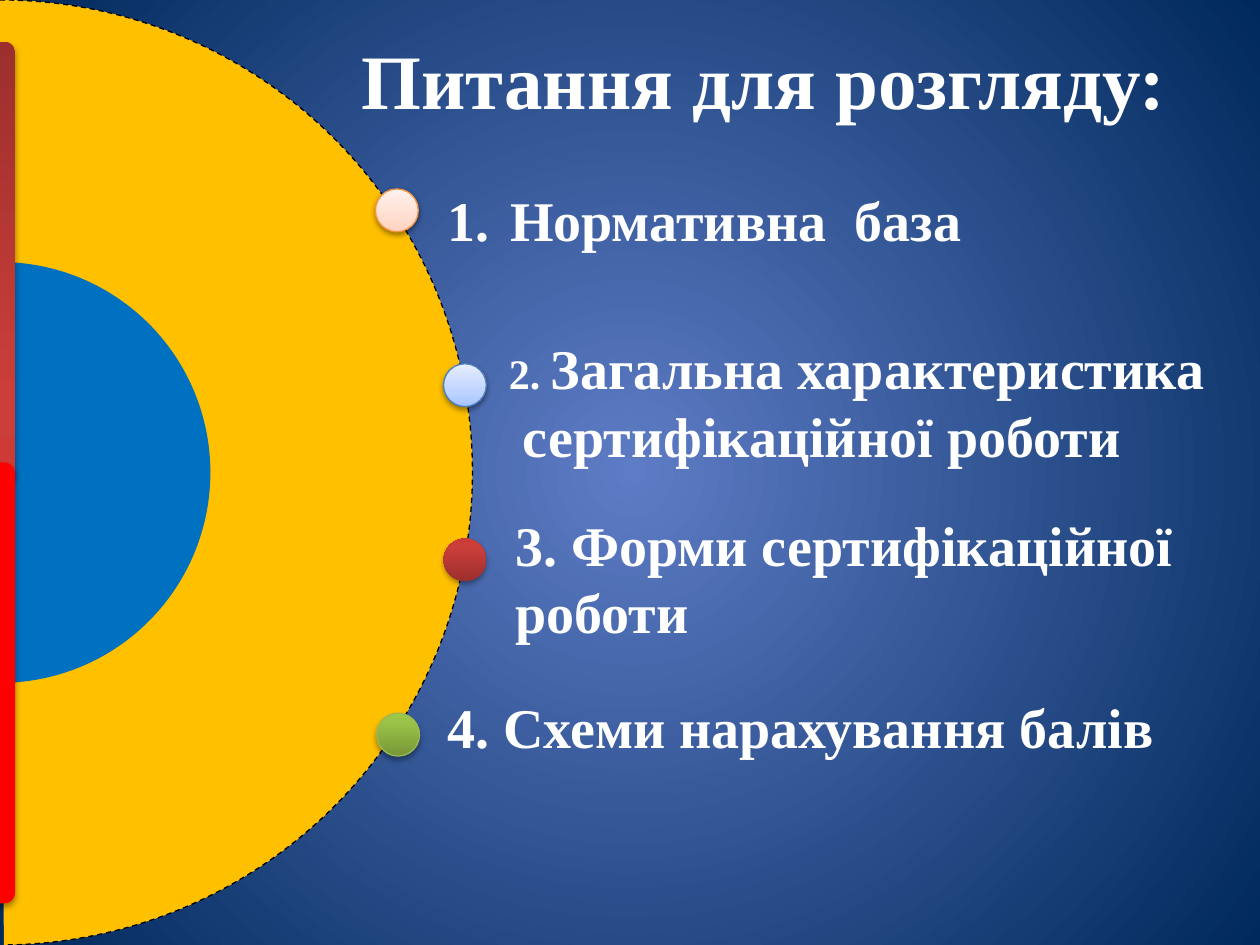
from lxml import etree
from pptx import Presentation
from pptx import util as u
from pptx.dml.color import RGBColor
from pptx.enum import dml, shapes, text
from pptx.oxml import ns

FONT = "Times New Roman"
WHITE = "FFFFFF"
RED = [(0, "9C2F2D"), (80, "CB3E3A"), (100, "CE3B37")]
LINEAR = ("lin", {"ang": "16200000", "scaled": "0"})
CIRCLE = ("path", {"path": "circle"})


def color(code):
    """Turn a hex string into a colour."""
    return RGBColor.from_string(code)


def add_node(parent, tag, **values):
    """Append a drawing element with the given attributes."""
    return etree.SubElement(parent, ns.qn("a:" + tag), values)


def set_gradient(holder, stops, kind):
    """Put a gradient in the place of the solid fill of an element."""
    solid = holder.find(ns.qn("a:solidFill"))
    gradient = etree.Element(ns.qn("a:gradFill"), rotWithShape="1")
    stop_list = add_node(gradient, "gsLst")
    for position, code in stops:
        stop = add_node(stop_list, "gs", pos=str(position * 1000))
        add_node(stop, "srgbClr", val=code)
    tag, values = kind
    shade = add_node(gradient, tag, **values)
    if tag == "path":
        add_node(shade, "fillToRect", l="50000", t="50000", r="50000", b="50000")
    holder.replace(solid, gradient)


def add_background(page):
    """Fill the page with a gradient that spreads from the centre."""
    page.background.fill.solid()
    holder = page.element.find(".//" + ns.qn("p:bgPr"))
    set_gradient(holder, [(0, "5E7CC5"), (100, "00295C")], CIRCLE)


def add_figure(owner, kind, place, fill, line=None, adjustments=()):
    """Add a preset shape with a plain or gradient fill."""
    figure = owner.shapes.add_shape(kind, *map(u.Inches, place))
    figure.shadow.inherit = False
    for index, value in enumerate(adjustments):
        figure.adjustments[index] = value
    figure.fill.solid()
    if isinstance(fill, str):
        figure.fill.fore_color.rgb = color(fill)
    else:
        set_gradient(figure.element.spPr, fill, LINEAR)
    if line:
        figure.line.color.rgb = color(line)
        figure.line.width = u.Pt(0.75)
    else:
        figure.line.fill.background()
    return figure


def add_shadow(figure, opacity, distance):
    """Cast a soft black shadow below a shape."""
    effects = figure.element.spPr.find(ns.qn("a:effectLst"))
    shadow = add_node(effects, "outerShdw", blurRad=str(u.Pt(3.1)),
                      dist=str(u.Pt(distance)), dir="5400000", rotWithShape="0")
    shade = add_node(shadow, "srgbClr", val="000000")
    add_node(shade, "alpha", val=str(opacity * 1000))


def add_half_disc(page, radius, end, fill, line=None):
    """Add a right half disc centred on the left edge of the page."""
    place = (-radius, 3.75 - radius, 2 * radius, 2 * radius)
    return add_figure(page, shapes.MSO_SHAPE.ARC, place, fill, line, (162, end))


def add_dot(page, left, top, stops, line, opacity, distance):
    """Add a round marker on the edge of the large disc."""
    dot = add_figure(page, shapes.MSO_SHAPE.OVAL, (left, top, 0.34, 0.34), stops, line)
    add_shadow(dot, opacity, distance)


def add_bars(page):
    """Add the two stacked bars at the left edge as a group."""
    group = page.shapes.add_group_shape()
    for top, fill in ((0.33, RED), (3.67, "FF0000")):
        bar = add_figure(group, shapes.MSO_SHAPE.ROUNDED_RECTANGLE,
                         (-0.13, top, 0.25, 3.5), fill, adjustments=(0.35,))
        bar.rotation = 180
        add_shadow(bar, 35, 1.8)


def add_text(page, place, spans, **frame_format):
    """Add a one-paragraph text box from pairs of wording and size."""
    box = page.shapes.add_textbox(*map(u.Inches, place))
    frame = box.text_frame
    frame_values = {"word_wrap": True, "auto_size": text.MSO_AUTO_SIZE.SHAPE_TO_FIT_TEXT}
    for name, value in (frame_values | frame_format).items():
        setattr(frame, name, value)
    para = frame.paragraphs[0]
    for wording, size in spans:
        span = para.add_run()
        span.text = wording
        for name, value in {"name": FONT, "size": u.Pt(size), "bold": True}.items():
            setattr(span.font, name, value)
        span.font.color.rgb = color(WHITE)
    return para


def number_paragraph(para):
    """Give a paragraph an automatic number and a hanging indent."""
    settings = para._p.get_or_add_pPr()
    settings.set("marL", str(u.Inches(0.5)))
    settings.set("indent", str(u.Inches(-0.5)))
    add_node(settings, "buFont", typeface="+mj-lt")
    add_node(settings, "buAutoNum", type="arabicPeriod")


def main():
    """Build the slide and save it."""
    deck = Presentation()
    deck.slide_width, deck.slide_height = u.Inches(10), u.Inches(7.5)
    page = deck.slides.add_slide(deck.slide_layouts[6])
    add_background(page)

    large_disc = add_half_disc(page, 3.75, 53.71, "FFC000", "000000")
    large_disc.line.dash_style = dml.MSO_LINE.DASH

    number_paragraph(add_text(page, (3.45, 1.42, 5.9, 0.64), [("Нормативна  база", 32)]))
    topics = [
        ((3.94, 2.6, 5.79, 1.18),
         [("2. ", 24), ("Загальна характеристика  сертифікаційної роботи", 32)]),
        ((3.99, 4, 5.57, 1.18), [("3. Форми сертифікаційної роботи", 32)]),
        ((3.45, 5.45, 6.1, 0.64), [("4. Схеми нарахування балів", 32)]),
    ]
    for place, spans in topics:
        add_text(page, place, spans)

    peach = [(0, "FFD2BD"), (35, "FFDED0"), (100, "FFF2ED")]
    blue = [(0, "A4C4FF"), (35, "BFD4FF"), (100, "E6EEFF")]
    green = [(0, "779737"), (80, "9BC348"), (100, "9DC746")]
    dots = [
        (2.98, peach, "F69240", 38, 1.6),
        (3.52, blue, "4B7EBC", 38, 1.6),
        (3.52, RED, None, 35, 1.8),
        (2.99, green, "98B955", 35, 1.8),
    ]
    for row, (left, *style) in enumerate(dots):
        add_dot(page, left, 1.5 + row * 1.387, *style)

    add_half_disc(page, 1.67, 53.6, "0070C0")
    add_bars(page)

    margins = dict.fromkeys(("margin_left", "margin_top", "margin_right", "margin_bottom"), 0)
    title = add_text(page, (2.8, 0.26, 6.53, 0.74), [("Питання для розгляду:", 44)], **margins)
    title.alignment = text.PP_ALIGN.CENTER

    deck.save("out.pptx")


if __name__ == "__main__":
    main()
